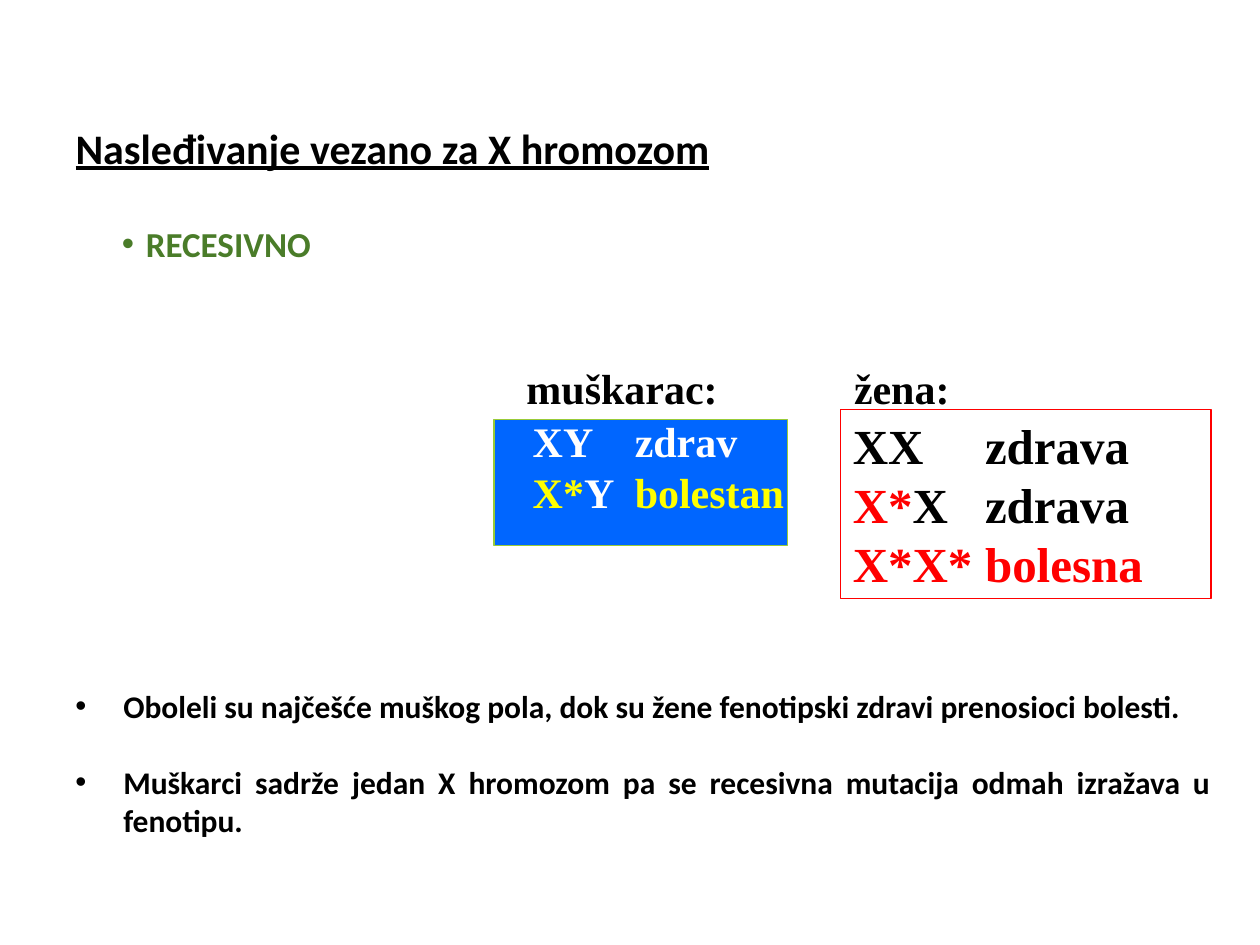
import pptx
import pptx.util
import pptx.dml.color
import pptx.enum.shapes
import pptx.enum.text
import pptx.oxml
import pptx.oxml.ns

Inches = pptx.util.Inches
Pt = pptx.util.Pt
BLACK, WHITE, RED, YELLOW, GREEN = "000000", "FFFFFF", "FF0000", "FFFF00", "4A7C29"
SERIF, SANS = "Times New Roman", "Calibri"


def color(value):
    return pptx.dml.color.RGBColor.from_string(value)


class SlideBuilder:
    """Hold the current slide and draw its elements in one bold style."""

    def __init__(self, presentation):
        self.slide = presentation.slides.add_slide(presentation.slide_layouts[5])

    def add_run(self, paragraph, text, font_name, size, hex_color):
        run = paragraph.add_run()
        run.text = text
        run.font.name = font_name
        run.font.size = Pt(size)
        run.font.bold = True
        run.font.color.rgb = color(hex_color)
        return run

    def title(self, text, left, top, width, height):
        shape = self.slide.shapes.title
        shape.left, shape.top = Inches(left), Inches(top)
        shape.width, shape.height = Inches(width), Inches(height)
        frame = shape.text_frame
        frame.vertical_anchor = pptx.enum.text.MSO_ANCHOR.TOP
        paragraph = frame.paragraphs[0]
        paragraph.alignment = pptx.enum.text.PP_ALIGN.LEFT
        self.add_run(paragraph, text, SANS, 24, BLACK).font.underline = True

    def panel(self, left, top, width, height, fill, line):
        shape = self.slide.shapes.add_shape(
            pptx.enum.shapes.MSO_SHAPE.RECTANGLE,
            Inches(left), Inches(top), Inches(width), Inches(height))
        shape.shadow.inherit = False
        shape.fill.solid()
        shape.fill.fore_color.rgb = color(fill)
        shape.line.color.rgb = color(line)
        shape.line.width = Pt(1)

    def text_box(self, left, top, width, height, lines, font_name, size, tab=None):
        box = self.slide.shapes.add_textbox(
            Inches(left), Inches(top), Inches(width), Inches(height))
        frame = box.text_frame
        frame.word_wrap = True
        for index, runs in enumerate(lines):
            paragraph = frame.add_paragraph() if index else frame.paragraphs[0]
            for text, hex_color in runs:
                self.add_run(paragraph, text, font_name, size, hex_color)
            if tab:
                properties = paragraph._p.get_or_add_pPr()
                properties.append(pptx.oxml.parse_xml(
                    f'<a:tabLst {pptx.oxml.ns.nsdecls("a")}>'
                    f'<a:tab pos="{Inches(tab)}" algn="l"/></a:tabLst>'))
        return frame

    def bullet_list(self, left, top, width, height, items, size, hex_color,
                    margin, hanging, gap=0):
        lines = [[(item, hex_color)] for item in items]
        frame = self.text_box(left, top, width, height, lines, SANS, size)
        for index, paragraph in enumerate(frame.paragraphs):
            paragraph.alignment = pptx.enum.text.PP_ALIGN.JUSTIFY
            paragraph.space_before = Pt(gap if index else 0)
            properties = paragraph._p.get_or_add_pPr()
            properties.set("marL", str(Inches(margin)))
            properties.set("indent", str(-Inches(hanging)))
            for tag in ('buFont typeface="Arial"', 'buChar char="•"'):
                properties.append(pptx.oxml.parse_xml(
                    f'<a:{tag} {pptx.oxml.ns.nsdecls("a")}/>'))


def main():
    presentation = pptx.Presentation()
    presentation.slide_width, presentation.slide_height = Inches(10), Inches(7.5)
    builder = SlideBuilder(presentation)

    builder.title("Nasleđivanje vezano za X hromozom", 0.5, 0.92, 9, 0.5)
    builder.bullet_list(0.5, 1.72, 9, 0.44, ["RECESIVNO"], 20, GREEN, 0.56, 0.19)

    builder.panel(6.67, 3.25, 2.94, 1.5, WHITE, RED)
    builder.panel(3.92, 3.33, 2.33, 1, "0066FF", "99CB38")
    for heading, left in (("muškarac:", 4.08), ("žena:", 6.68)):
        builder.text_box(left, 2.83, 2.4, 0.5, [[(heading, BLACK)]], SERIF, 24)

    male_genotypes = [
        [("XY\tzdrav", WHITE)],
        [("X*", YELLOW), ("Y\t", WHITE), ("bolestan", YELLOW)],
    ]
    female_genotypes = [
        [("XX\tzdrava", BLACK)],
        [("X*", RED), ("X\tzdrava", BLACK)],
        [("X*X*\tbolesna", RED)],
    ]
    builder.text_box(4.13, 3.25, 2.4, 0.91, male_genotypes, SERIF, 24, tab=0.81)
    builder.text_box(6.67, 3.25, 2.94, 1.51, female_genotypes, SERIF, 28, tab=1.05)

    builder.bullet_list(0, 5.4, 9.71, 1.31, [
        "Oboleli su najčešće muškog pola, dok su žene fenotipski zdravi prenosioci bolesti.",
        "Muškarci sadrže jedan X hromozom pa se recesivna mutacija odmah izražava u fenotipu.",
    ], 18, BLACK, 0.88, 0.38, gap=22)

    presentation.save("out.pptx")


if __name__ == "__main__":
    main()
